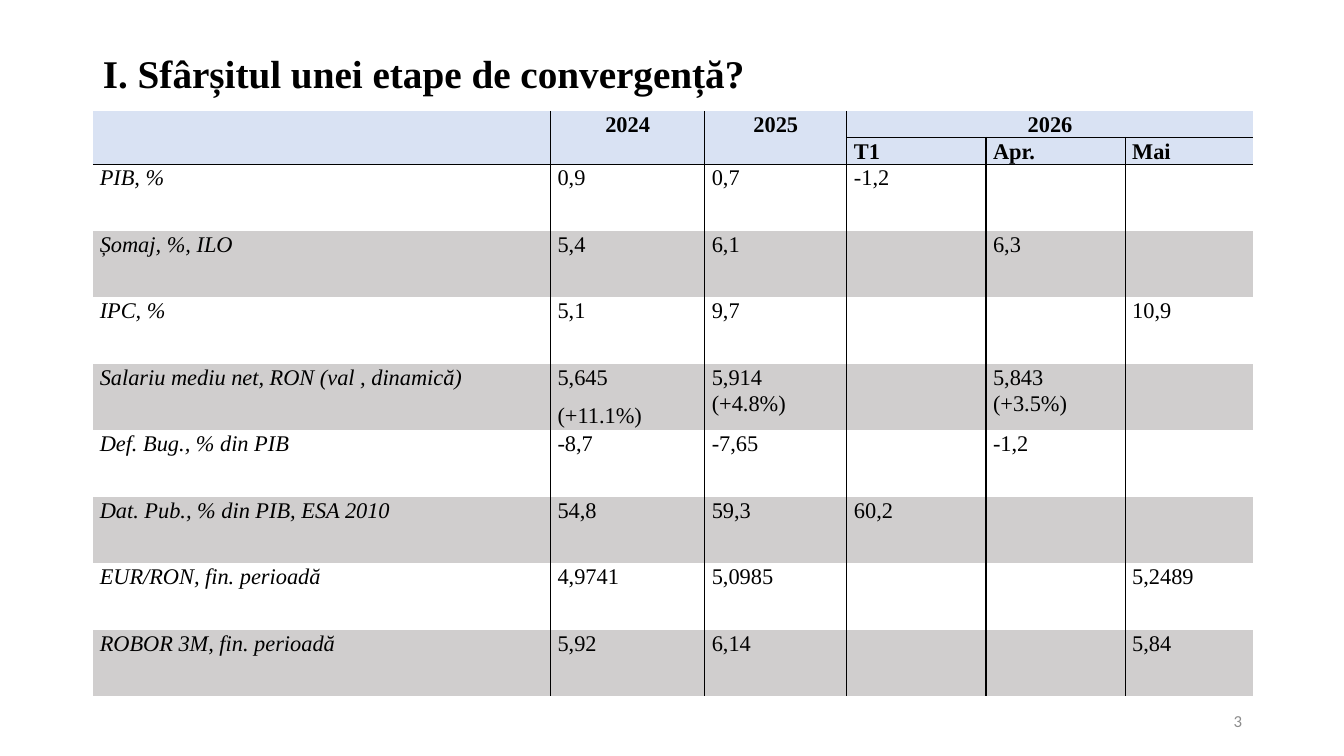
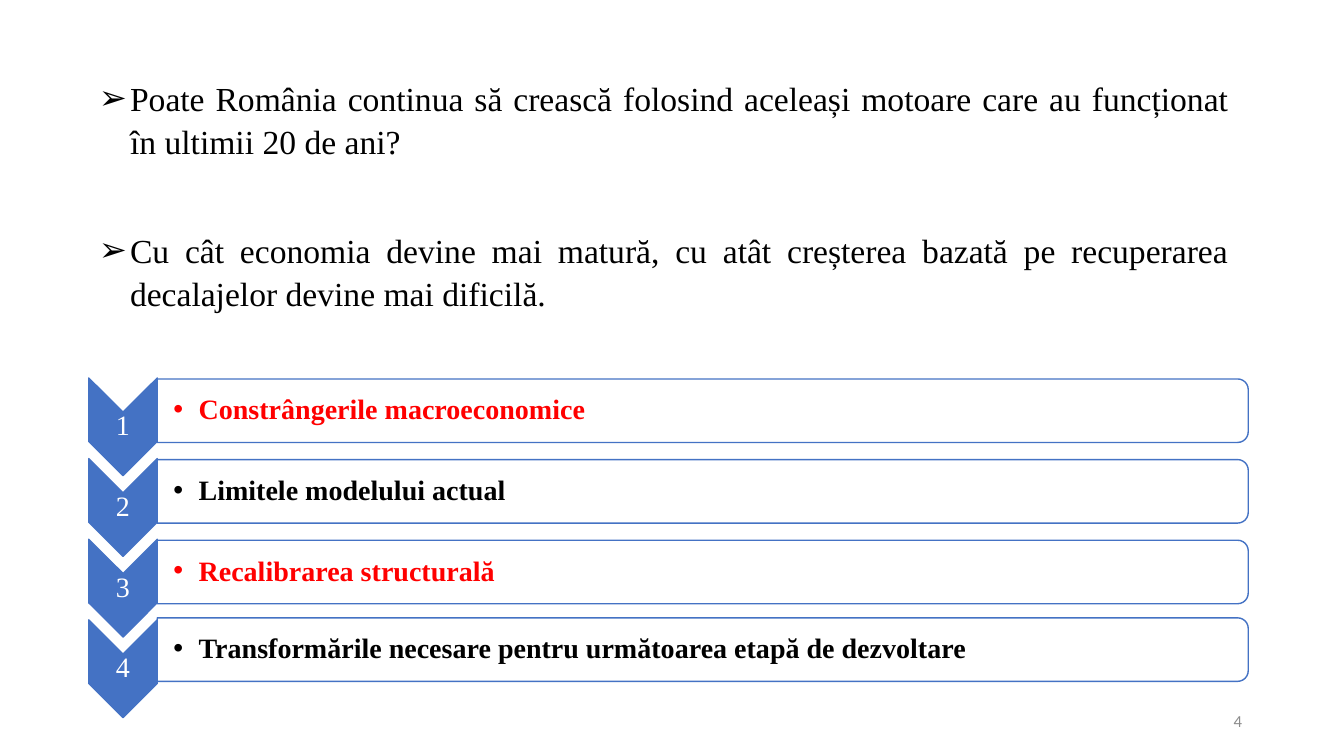
from lxml.etree import SubElement
from pptx import Presentation
from pptx.dml.color import RGBColor
from pptx.enum.shapes import MSO_SHAPE
from pptx.enum.text import MSO_ANCHOR, PP_ALIGN
from pptx.oxml.ns import qn
from pptx.util import Inches, Pt

COLOURS = {"text": "000000", "accent": "4472C4", "alert": "FF0000", "paper": "FFFFFF",
           "header": "D9E2F3", "band": "D0CECE", "number": "8C8C8C"}
SERIF = "Times New Roman"
NO_STYLE = "{2D5ABB26-0587-4C30-8999-92F81FD0307C}"

TITLE = "I. Sfârșitul unei etape de convergență?"
YEARS = ["", "2024", "2025", "2026", "", ""]
PERIODS = ["", "", "", "T1", "Apr.", "Mai"]
INDICATORS = [
    ["PIB, %", "0,9", "0,7", "-1,2", "", ""],
    ["Șomaj, %, ILO", "5,4", "6,1", "", "6,3", ""],
    ["IPC, %", "5,1", "9,7", "", "", "10,9"],
    ["Salariu mediu net, RON (val , dinamică)", "5,645\n(+11.1%)", "5,914 (+4.8%)", "",
     "5,843 (+3.5%)", ""],
    ["Def. Bug., % din PIB", "-8,7", "-7,65", "", "-1,2", ""],
    ["Dat. Pub., % din PIB, ESA 2010", "54,8", "59,3", "60,2", "", ""],
    ["EUR/RON, fin. perioadă", "4,9741", "5,0985", "", "", "5,2489"],
    ["ROBOR 3M, fin. perioadă", "5,92", "6,14", "", "", "5,84"],
]
COLUMN_WIDTHS = [4.54, 1.53, 1.41, 1.38, 1.38, 1.27]
HEADER_HEIGHT, ROW_HEIGHT = 0.26, 0.66
MERGES = [((0, 0), (1, 0)), ((0, 1), (1, 1)), ((0, 2), (1, 2)), ((0, 3), (0, 5))]

QUESTIONS = [
    "Poate România continua să crească folosind aceleași motoare care au funcționat "
    "în ultimii 20 de ani?",
    "Cu cât economia devine mai matură, cu atât creșterea bazată pe recuperarea "
    "decalajelor devine mai dificilă.",
]
# text, colour, top of the bar
STEPS = [
    ("Constrângerile macroeconomice", "alert", 3.76),
    ("Limitele modelului actual", "text", 4.56),
    ("Recalibrarea structurală", "alert", 5.36),
    ("Transformările necesare pentru următoarea etapă de dezvoltare", "text", 6.13),
]
CHEVRON_LEFT, CHEVRON_TOP, CHEVRON_WIDTH, CHEVRON_HEIGHT = 0.88, 3.75, 0.68, 0.97
STEP_PITCH = 0.8
BAR_LEFT, BAR_WIDTH, BAR_HEIGHT = 1.56, 10.82, 0.63


def rgb(name):
    return RGBColor.from_string(COLOURS[name])


def place(shape, left, top, width, height):
    shape.left, shape.top = Inches(left), Inches(top)
    shape.width, shape.height = Inches(width), Inches(height)


def style(paragraph, size, colour="text", font=SERIF, bold=False, italic=False,
          align=PP_ALIGN.LEFT, spacing=1.0, after=0):
    paragraph.alignment, paragraph.line_spacing = align, spacing
    paragraph.space_before, paragraph.space_after = Pt(0), Pt(after)
    face = paragraph.font
    face.name, face.size, face.bold, face.italic = font, Pt(size), bold, italic
    face.color.rgb = rgb(colour)


def add_bullet(paragraph, char, indent):
    properties = paragraph._p.get_or_add_pPr()
    properties.set("marL", str(Inches(indent)))
    properties.set("indent", str(-Inches(indent)))
    SubElement(properties, qn("a:buFont"), typeface="Arial")
    SubElement(properties, qn("a:buChar"), char=char)


def add_label(slide, text, left, top, width, height, inset=0.01, bullet=None, **look):
    frame = slide.shapes.add_textbox(
        Inches(left), Inches(top), Inches(width), Inches(height)).text_frame
    frame.word_wrap, frame.vertical_anchor = True, MSO_ANCHOR.MIDDLE
    frame.margin_left = Inches(inset)
    frame.margin_right = frame.margin_top = frame.margin_bottom = Inches(0.01)
    paragraph = frame.paragraphs[0]
    paragraph.text = text
    if bullet:
        add_bullet(paragraph, bullet, 0.25)
    style(paragraph, **look)


def add_page_number(slide, number):
    add_label(slide, str(number), 9.42, 6.95, 2.91, 0.4, size=12, colour="number",
              font="Calibri", align=PP_ALIGN.RIGHT)


def add_turned_shape(slide, kind, left, top, width, height, fill):
    """Add a preset turned by 90 degrees that covers the given upright area."""
    shape = slide.shapes.add_shape(
        kind, Inches(left + (width - height) / 2), Inches(top + (height - width) / 2),
        Inches(height), Inches(width))
    shape.rotation = 90
    shape.shadow.inherit = False
    shape.fill.solid()
    shape.fill.fore_color.rgb = rgb(fill)
    shape.line.color.rgb, shape.line.width = rgb("accent"), Pt(1)


def add_borders(cell, row, column):
    in_merged_year = row == 0 and column >= 3
    sides = {"a:lnL": column > 0 and not (in_merged_year and column > 3),
             "a:lnR": column < 5 and not in_merged_year,
             "a:lnB": row < 2}
    for tag, drawn in sides.items():
        if drawn:
            line = SubElement(cell._tc.get_or_add_tcPr(), qn(tag), w=str(Pt(1)))
            fill = SubElement(line, qn("a:solidFill"))
            SubElement(fill, qn("a:srgbClr"), val=COLOURS["text"])


def fill_cell(cell, text, row, column):
    is_header = row < 2
    cell.margin_left = cell.margin_right = Inches(0.07)
    cell.margin_top = cell.margin_bottom = 0
    cell.text = text
    for paragraph in cell.text_frame.paragraphs:
        style(paragraph, 16, bold=is_header, italic=not is_header and column == 0,
              align=PP_ALIGN.CENTER if row == 0 else PP_ALIGN.JUSTIFY,
              spacing=1.07, after=8)
    add_borders(cell, row, column)
    cell.fill.solid()
    cell.fill.fore_color.rgb = rgb("header" if is_header else "band" if row % 2 else "paper")


def build_indicators(prs):
    slide = prs.slides.add_slide(prs.slide_layouts[5])
    title = slide.shapes.title
    place(title, 0.92, 0.4, 11.5, 0.7)
    title.text_frame.text = TITLE
    title.text_frame.vertical_anchor = MSO_ANCHOR.MIDDLE
    style(title.text_frame.paragraphs[0], 28, bold=True, spacing=0.9)

    rows = [YEARS, PERIODS, *INDICATORS]
    heights = [HEADER_HEIGHT] * 2 + [ROW_HEIGHT] * len(INDICATORS)
    frame = slide.shapes.add_table(
        len(rows), len(COLUMN_WIDTHS), Inches(0.92), Inches(1.1),
        Inches(sum(COLUMN_WIDTHS)), Inches(sum(heights)))
    table = frame.table
    frame.element.find(".//" + qn("a:tableStyleId")).text = NO_STYLE
    table.first_row = table.horz_banding = False
    for column, width in zip(table.columns, COLUMN_WIDTHS):
        column.width = Inches(width)
    for row, height in zip(table.rows, heights):
        row.height = Inches(height)
    for row, texts in enumerate(rows):
        for column, text in enumerate(texts):
            fill_cell(table.cell(row, column), text, row, column)
    for first, last in MERGES:
        table.cell(*first).merge(table.cell(*last))
    add_page_number(slide, 3)


def build_questions(prs):
    slide = prs.slides.add_slide(prs.slide_layouts[1])
    unused_title = slide.shapes.title.element
    unused_title.getparent().remove(unused_title)
    body = slide.placeholders[1]
    place(body, 0.88, 0.69, 11.41, 2.46)
    body.text_frame.text = "\n".join(QUESTIONS)
    for paragraph in body.text_frame.paragraphs:
        add_bullet(paragraph, "➢", 0.31)
        style(paragraph, 24, align=PP_ALIGN.JUSTIFY, spacing=1.07, after=47)

    for index, (text, colour, bar_top) in enumerate(STEPS):
        chevron = (CHEVRON_LEFT, CHEVRON_TOP + index * STEP_PITCH,
                   CHEVRON_WIDTH, CHEVRON_HEIGHT)
        bar = (BAR_LEFT, bar_top, BAR_WIDTH, BAR_HEIGHT)
        add_turned_shape(slide, MSO_SHAPE.CHEVRON, *chevron, "accent")
        add_label(slide, str(index + 1), *chevron, size=20, colour="paper",
                  align=PP_ALIGN.CENTER, spacing=0.9)
        add_turned_shape(slide, MSO_SHAPE.ROUND_2_SAME_RECTANGLE, *bar, "paper")
        add_label(slide, text, *bar, inset=0.16, bullet="•", size=20, colour=colour,
                  bold=True, spacing=0.9)
    add_page_number(slide, 4)


def main():
    prs = Presentation()
    prs.slide_width, prs.slide_height = Inches(13.33), Inches(7.5)
    build_indicators(prs)
    build_questions(prs)
    prs.save("out.pptx")


if __name__ == "__main__":
    main()
